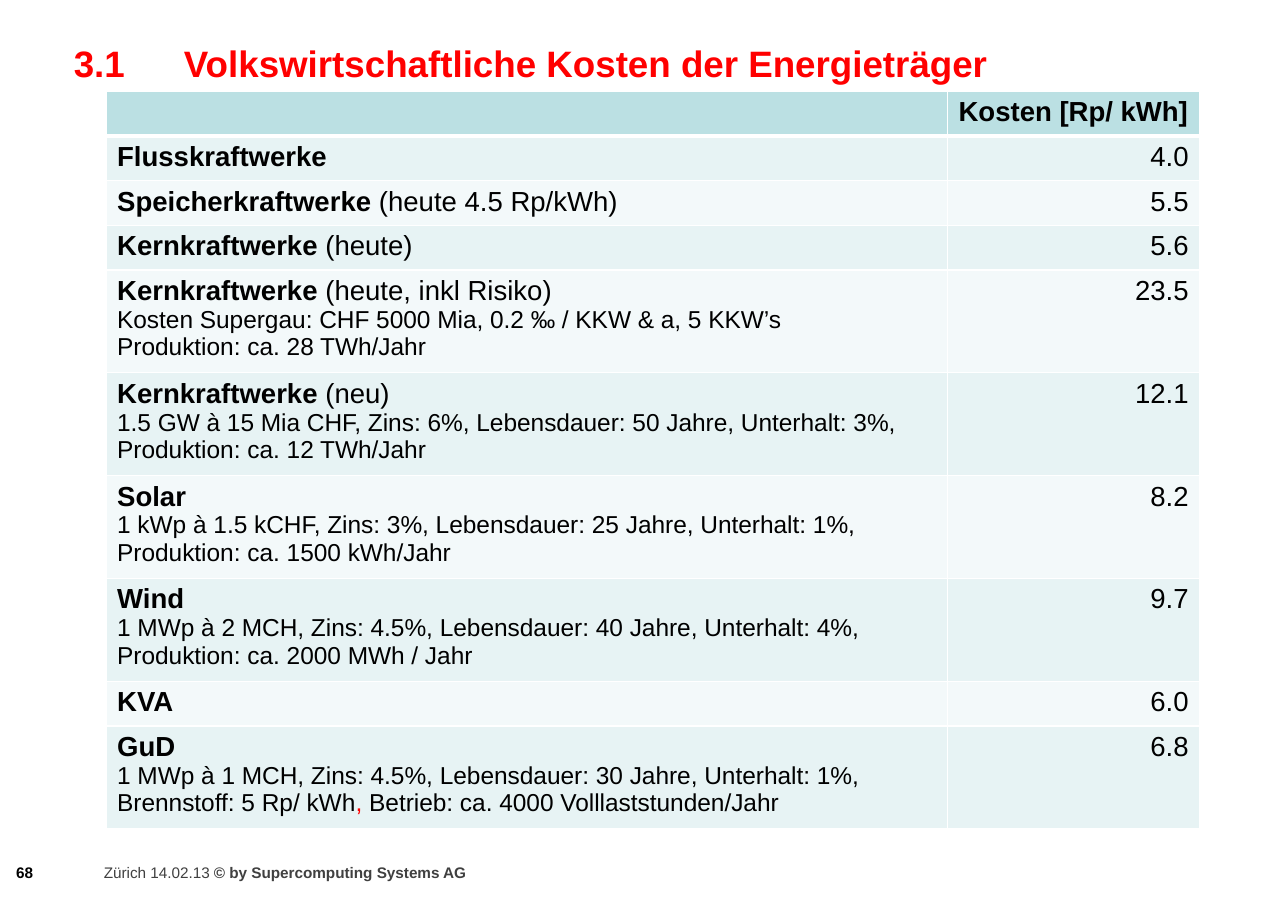
from lxml.etree import SubElement
from pptx import Presentation
from pptx.dml.color import RGBColor
from pptx.enum.text import PP_ALIGN
from pptx.oxml.ns import qn
from pptx.util import Inches, Pt

WIDE, HIGH = Inches(11.69), Inches(8.27)
BLACK = RGBColor(0x00, 0x00, 0x00)
RED = RGBColor(0xFF, 0x00, 0x00)
GREY = RGBColor(0x40, 0x40, 0x40)
WHITE = RGBColor(0xFF, 0xFF, 0xFF)
HEAD = RGBColor(0xBB, 0xE0, 0xE3)
BANDS = RGBColor(0xF3, 0xF9, 0xFA), RGBColor(0xE7, 0xF3, 0xF4)

FRAME = {"word_wrap": True, "margin_left": Inches(0.11), "margin_right": Inches(0.11),
         "margin_top": Inches(0.06), "margin_bottom": Inches(0.06)}
TITLE = {"name": "Arial", "size": Pt(24), "bold": True}
NAME = {"name": "Arial", "size": Pt(18), "bold": True}
PLAIN = {"name": "Arial", "size": Pt(18), "bold": False}
NOTE = {"name": "Arial", "size": Pt(16), "bold": False}
FOOT = {"name": "Arial", "size": Pt(10), "bold": False}
STRONG = {"name": "Arial", "size": Pt(10), "bold": True}

COLS = 65.3, 19.6
ROW = 4.9
COSTS = [
    ("Flusskraftwerke", "", [], "4.0"),
    ("Speicherkraftwerke", " (heute 4.5 Rp/kWh)", [], "5.5"),
    ("Kernkraftwerke", " (heute)", [], "5.6"),
    ("Kernkraftwerke", " (heute, inkl Risiko)",
     [["Kosten Supergau: CHF 5000 Mia, 0.2 ‰ / KKW & a, 5 KKW’s"],
      ["Produktion: ca. 28 TWh/Jahr"]], "23.5"),
    ("Kernkraftwerke", " (neu)",
     [["1.5 GW à 15 Mia CHF, Zins: 6%, Lebensdauer: 50 Jahre, Unterhalt: 3%,"],
      ["Produktion: ca. 12 TWh/Jahr"]], "12.1"),
    ("Solar", "",
     [["1 kWp à 1.5 kCHF, Zins: 3%, Lebensdauer: 25 Jahre, Unterhalt: 1%,"],
      ["Produktion: ca. 1500 kWh/Jahr"]], "8.2"),
    ("Wind", "",
     [["1 MWp à 2 MCH, Zins: 4.5%, Lebensdauer: 40 Jahre, Unterhalt: 4%,"],
      ["Produktion: ca. 2000 MWh / Jahr"]], "9.7"),
    ("KVA", "", [], "6.0"),
    ("GuD", "",
     [["1 MWp à 1 MCH, Zins: 4.5%, Lebensdauer: 30 Jahre, Unterhalt: 1%,"],
      ["Brennstoff: 5 Rp/ kWh", ", ", "Betrieb: ca. 4000 Volllaststunden/Jahr"]], "6.8"),
]


def across(share):
    """Turn a percentage of the slide's width into a length."""
    return int(WIDE * share / 100)


def down(share):
    """Turn a percentage of the slide's height into a length."""
    return int(HIGH * share / 100)


def apply(thing, form):
    """Set each format value on the thing."""
    for key, value in form.items():
        setattr(thing, key, value)


def write(para, text, form, color=BLACK):
    """Add a formatted run to a paragraph."""
    run = para.add_run()
    run.text = text
    apply(run.font, form)
    run.font.color.rgb = color


def add_box(slide, left, top, width, height):
    """Add a text box and return its first paragraph."""
    box = slide.shapes.add_textbox(across(left), down(top), across(width), down(height))
    apply(box.text_frame, FRAME)
    return box.text_frame.paragraphs[0]


def add_title(slide):
    """Add the numbered heading with its tab stop."""
    para = add_box(slide, 4.79, 3.75, 95.2, 16.69)
    tabs = SubElement(para._p.get_or_add_pPr(), qn("a:tabLst"))
    SubElement(tabs, qn("a:tab"), pos=str(Inches(1)), algn="l")
    write(para, "3.1\tVolkswirtschaftliche Kosten der Energieträger", TITLE, RED)


def add_footer(slide):
    """Add the page number and the copyright line."""
    page = add_box(slide, -0.85, 94.07, 4.36, 3.87)
    page.alignment = PP_ALIGN.RIGHT
    write(page, "68", STRONG)
    line = add_box(slide, 7.12, 94.07, 53.12, 3.39)
    write(line, "Zürich 14.02.13 ", FOOT, GREY)
    write(line, "© by Supercomputing Systems AG", STRONG, GREY)


def paint(cell, color, top, base):
    """Give a cell its white borders and its fill."""
    props = cell._tc.get_or_add_tcPr()
    for side, width in zip("LRTB", (1, 1, top, base)):
        edge = SubElement(props, qn(f"a:ln{side}"), w=str(Pt(width)))
        fill = SubElement(edge, qn("a:solidFill"))
        SubElement(fill, qn("a:srgbClr"), val=str(WHITE))
    cell.fill.solid()
    cell.fill.fore_color.rgb = color


def add_notes(cell, lines):
    """Add the small lines below a name, parted by line breaks."""
    para = cell.text_frame.add_paragraph()
    for index, parts in enumerate(lines):
        if index:
            para.add_line_break()
            SubElement(para._p[-1], qn("a:rPr"), sz="1600")
        for part in parts:
            write(para, part, NOTE, RED if part == ", " else BLACK)


def fill_row(cells, name, extra, lines, cost):
    """Write one energy source and its cost."""
    para = cells[0].text_frame.paragraphs[0]
    write(para, name, NAME)
    if extra:
        write(para, extra, PLAIN)
    if lines:
        add_notes(cells[0], lines)
    price = cells[1].text_frame.paragraphs[0]
    price.alignment = PP_ALIGN.RIGHT
    write(price, cost, PLAIN)


def add_costs(slide):
    """Add the table of costs, whose rows grow with their text."""
    count = len(COSTS) + 1
    table = slide.shapes.add_table(count, len(COLS), across(8.24), down(10.04),
                                   across(sum(COLS)), down(ROW * count)).table
    for column, share in zip(table.columns, COLS):
        column.width = across(share)
    for index, row in enumerate(table.rows):
        row.height = down(ROW)
        cells = list(row.cells)
        for cell in cells:
            paint(cell, BANDS[index % 2] if index else HEAD,
                  3 if index == 1 else 1, 1 if index else 3)
        if index:
            fill_row(cells, *COSTS[index - 1])
    label = table.cell(0, 1).text_frame.paragraphs[0]
    label.alignment = PP_ALIGN.CENTER
    write(label, "Kosten [Rp/ kWh]", NAME)


def main():
    """Build the slide and save it."""
    deck = Presentation()
    apply(deck, {"slide_width": WIDE, "slide_height": HIGH})
    slide = deck.slides.add_slide(deck.slide_layouts[6])
    add_footer(slide)
    add_title(slide)
    add_costs(slide)
    deck.save("out.pptx")


if __name__ == "__main__":
    main()
